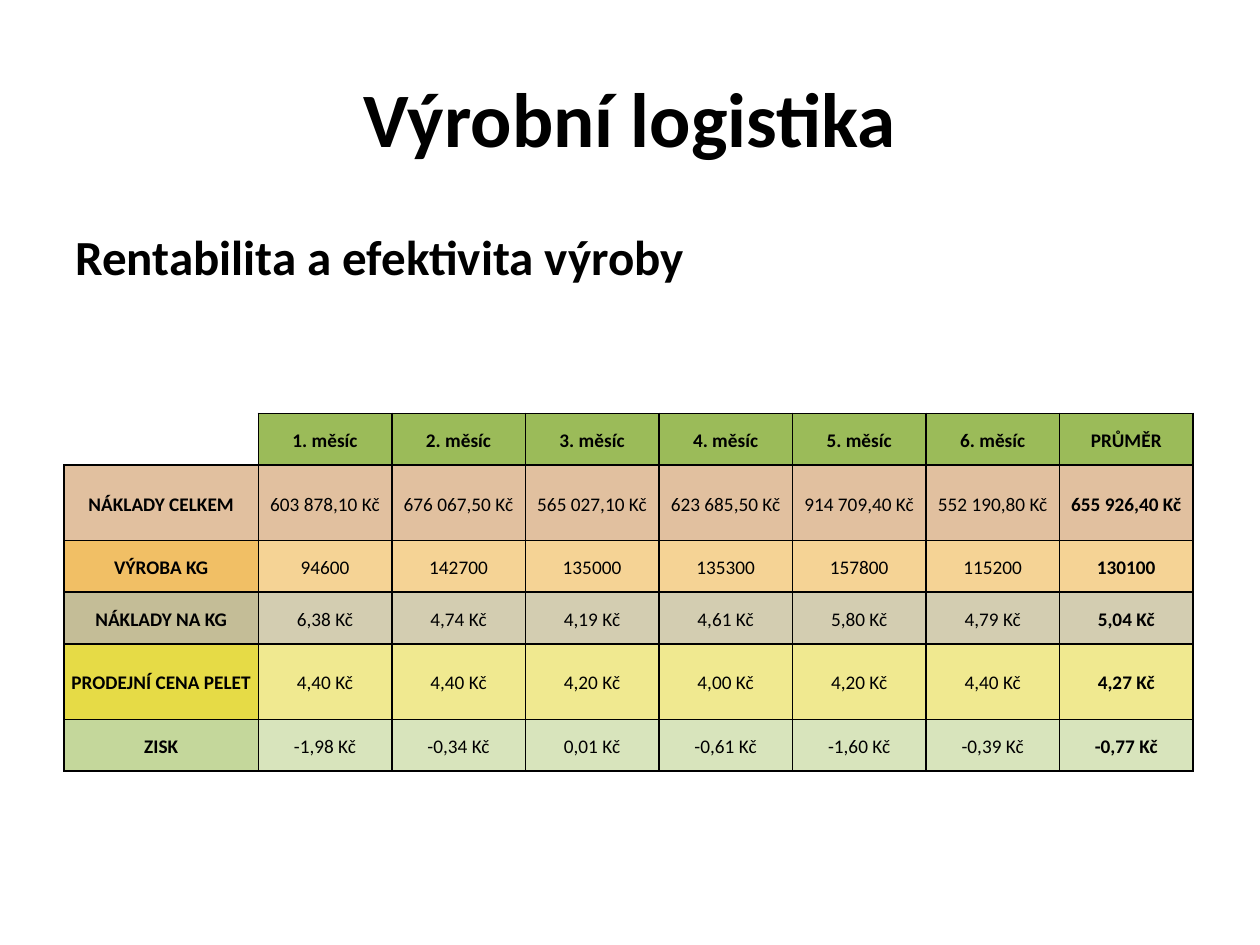
from lxml import etree
from pptx import Presentation
from pptx.dml.color import RGBColor
from pptx.enum.text import MSO_ANCHOR, PP_ALIGN
from pptx.oxml.ns import qn
from pptx.util import Inches, Pt

CENTER, LEFT = PP_ALIGN.CENTER, PP_ALIGN.LEFT
MIDDLE, TOP = MSO_ANCHOR.MIDDLE, MSO_ANCHOR.TOP
BLACK = "000000"


def style_text(frame, text, size, bold, align):
    frame.text = text
    para = frame.paragraphs[0]
    para.alignment = align
    font = para.runs[0].font
    font.name, font.size, font.bold = "Calibri", Pt(size), bold
    font.color.rgb = RGBColor.from_string(BLACK)
    return para


def add_borders(cell, sides):
    """Draw 1 pt black lines on the given sides (L, R, T, B); call before filling."""
    properties = cell._tc.get_or_add_tcPr()
    for side in sides:
        line = etree.SubElement(properties, qn(f"a:ln{side}"), w=str(Pt(1)))
        fill = etree.SubElement(line, qn("a:solidFill"))
        etree.SubElement(fill, qn("a:srgbClr"), val=BLACK)


deck = Presentation()
deck.slide_width, deck.slide_height = Inches(10), Inches(7.5)
page = deck.slides.add_slide(deck.slide_layouts[6])

headings = [
    ("Výrobní logistika", 0.3, 1.25, 44, CENTER, MIDDLE),
    ("Rentabilita a efektivita výroby", 1.75, 4.95, 28, LEFT, TOP),
]
for text, top, height, size, align, anchor in headings:
    box = page.shapes.add_textbox(Inches(0.5), Inches(top), Inches(9), Inches(height))
    frame = box.text_frame
    frame.word_wrap = True
    frame.vertical_anchor = anchor
    style_text(frame, text, size, True, align)

# Each row: height, label fill, value fill, texts
months = [f"{number}. měsíc" for number in range(1, 7)]
rows = [
    (0.41, None, "9BBB59", ["", *months, "PRŮMĚR"]),
    (0.6, "E1C09F", "E1C09F",
     ["NÁKLADY CELKEM", "603 878,10 Kč", "676 067,50 Kč", "565 027,10 Kč",
      "623 685,50 Kč", "914 709,40 Kč", "552 190,80 Kč", "655 926,40 Kč"]),
    (0.41, "F1BF65", "F5D395",
     ["VÝROBA KG", "94600", "142700", "135000", "135300", "157800", "115200", "130100"]),
    (0.41, "C4BD97", "D3CDB1",
     ["NÁKLADY NA KG", "6,38 Kč", "4,74 Kč", "4,19 Kč", "4,61 Kč", "5,80 Kč",
      "4,79 Kč", "5,04 Kč"]),
    (0.6, "E6DB46", "F0E990",
     ["PRODEJNÍ CENA PELET", "4,40 Kč", "4,40 Kč", "4,20 Kč", "4,00 Kč", "4,20 Kč",
      "4,40 Kč", "4,27 Kč"]),
    (0.41, "C4D79B", "D8E4BC",
     ["ZISK", "-1,98 Kč", "-0,34 Kč", "0,01 Kč", "-0,61 Kč", "-1,60 Kč",
      "-0,39 Kč", "-0,77 Kč"]),
]
widths = [1.54] + [1.06] * 7
last = len(widths) - 1

table = page.shapes.add_table(
    len(rows), len(widths), Inches(0.51), Inches(3.28),
    Inches(sum(widths)), Inches(sum(row[0] for row in rows))).table
table.first_row = table.horz_banding = False
for column, width in zip(table.columns, widths):
    column.width = Inches(width)

for r, (height, label_fill, value_fill, texts) in enumerate(rows):
    table.rows[r].height = Inches(height)
    for c, text in enumerate(texts):
        cell = table.cell(r, c)
        cell.margin_left = cell.margin_right = Inches(0.05)
        cell.margin_top = cell.margin_bottom = 0
        cell.vertical_anchor = MIDDLE
        add_borders(cell, "LRTB" if text else "RB")
        if not text:
            cell.fill.background()
            continue
        cell.fill.solid()
        cell.fill.fore_color.rgb = RGBColor.from_string(value_fill if c else label_fill)
        bold = r == 0 or c in (0, last)
        style_text(cell.text_frame, text, 11, bold, CENTER).line_spacing = 1.15

deck.save("out.pptx")
